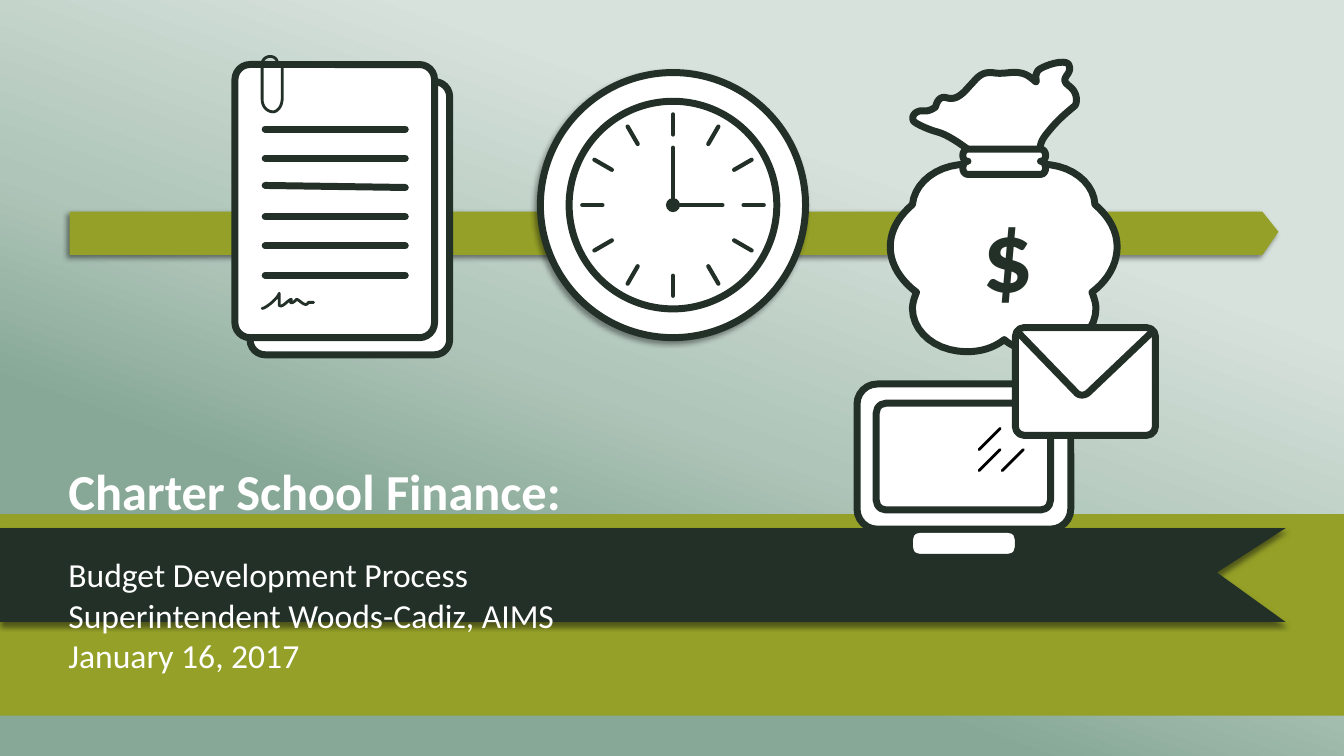
from dataclasses import dataclass
from math import cos, pi, sin

from lxml import etree
from pptx import Presentation
from pptx.dml.color import RGBColor
from pptx.enum import shapes as kinds, text as modes
from pptx.oxml import ns
from pptx.util import Inches, Pt


@dataclass(frozen=True)
class Theme:
    """Colours, font and sizes of the slide."""
    ink: str = "223028"
    olive: str = "94A027"
    white: str = "FFFFFF"
    black: str = "000000"
    shade: str = "0D0D0D"
    sky: tuple = ((27, "D7E2DC"), (53, "AFC5B9"), (70, "87A896"))
    font: str = "Calibri"
    title: int = 36
    body: int = 24
    sign: int = 72
    bold: int = 5
    mid: int = 3
    thin: int = 2


T = Theme()
OVAL = kinds.MSO_SHAPE.OVAL
RECT = kinds.MSO_SHAPE.RECTANGLE
ROUND = kinds.MSO_SHAPE.ROUNDED_RECTANGLE


def sub(node, tag, **attrs):
    """Append a drawing element and return it."""
    return etree.SubElement(node, ns.qn("a:" + tag), {k: str(v) for k, v in attrs.items()})


def cast(node, color, alpha, turn):
    """Put an outer shadow in an effect list."""
    out = sub(node, "outerShdw", blurRad=Pt(4), dist=Pt(3), dir=turn * 60000,
              algn="ctr", rotWithShape=0)
    sub(sub(out, "srgbClr", val=color), "alpha", val=alpha * 1000)


def stroke(part, width, color):
    """Draw a round-ended line."""
    part.line.color.rgb = RGBColor.from_string(color)
    part.line.width = Pt(width)
    edge = part._element.spPr.find(ns.qn("a:ln"))
    edge.set("cap", "rnd")
    sub(edge, "round")


def paint(shape, fill=T.white, width=T.bold, shadow=None):
    """Set the fill, outline and shadow of a shape."""
    shape.shadow.inherit = False
    if fill:
        shape.fill.solid()
        shape.fill.fore_color.rgb = RGBColor.from_string(fill)
    else:
        shape.fill.background()
    if width:
        stroke(shape, width, T.ink)
    else:
        shape.line.fill.background()
    if shadow:
        cast(shape._element.spPr.find(ns.qn("a:effectLst")), *shadow)


def block(slide, kind, x, y, w, h, radius=0, **look):
    """Add a preset shape."""
    shape = slide.shapes.add_shape(kind, Inches(x), Inches(y), Inches(w), Inches(h))
    if radius:
        shape.adjustments[0] = radius / min(w, h)
    paint(shape, **look)


def line(slide, x1, y1, x2, y2, width=T.bold, color=T.ink):
    """Add a straight line."""
    part = slide.shapes.add_connector(kinds.MSO_CONNECTOR.STRAIGHT, Inches(x1),
                                      Inches(y1), Inches(x2), Inches(y2))
    stroke(part, width, color)
    sub(part._element.spPr, "effectLst")


def curve(start, bend, steps=10):
    """Return points along a cubic curve."""
    ends = [start, bend[:2], bend[2:4], bend[4:]]
    points = []
    for i in range(1, steps + 1):
        t = i / steps
        mix = ((1 - t) ** 3, 3 * t * (1 - t) ** 2, 3 * t * t * (1 - t), t ** 3)
        points.append(tuple(sum(m * p[k] for m, p in zip(mix, ends)) for k in (0, 1)))
    return points


def outline(slide, x, y, parts, close=True, **look):
    """Add a freeform; pairs are corners and sixes are curves."""
    points = [parts[0]]
    for part in parts[1:]:
        points += [part] if len(part) == 2 else curve(points[-1], part)
    spots = [(Inches(x + px), Inches(y + py)) for px, py in points]
    pen = slide.shapes.build_freeform(*spots[0])
    pen.add_line_segments(spots[1:], close=close)
    paint(pen.convert_to_shape(), **look)


def label(slide, x, y, w, h, words, size, color=T.white, bold=False, wrap=False, glow=False):
    """Add a text box."""
    frame = slide.shapes.add_textbox(Inches(x), Inches(y), Inches(w), Inches(h)).text_frame
    frame.word_wrap = wrap
    frame.auto_size = modes.MSO_AUTO_SIZE.SHAPE_TO_FIT_TEXT
    frame.text = words
    for para in frame.paragraphs:
        for run in para.runs:
            run.font.size, run.font.bold = Pt(size), bold
            run.font.color.rgb = RGBColor.from_string(color)
            if glow:
                cast(sub(run.font._element, "effectLst"), T.black, 60, 135)
            run.font.name = T.font


def sky(slide):
    """Fill the background with a gradient."""
    fill = slide.background.fill
    fill.gradient()
    fill.gradient_angle = 250
    stops = slide._element.find(".//" + ns.qn("a:gsLst"))
    stops.clear()
    for pos, color in T.sky:
        sub(sub(stops, "gs", pos=pos * 1000), "srgbClr", val=color)


def banner(slide, x, y, w, h):
    """Draw the olive band and its dark ribbon."""
    block(slide, RECT, x, y, w, h, fill=T.olive, width=0)
    outline(slide, x, y + 0.14, [(0, 0), (12.75, 0), (12.07, 0.44), (12.75, 0.93), (0, 0.93)],
            fill=T.ink, width=0, shadow=(T.shade, 50, 90))


def track(slide, x, y, w, h, count=4, step=3.35):
    """Draw the row of arrow bars."""
    for i in range(count):
        outline(slide, x + i * step, y, [(0, 0), (w - 0.16, 0), (w, 0.2), (w - 0.16, h), (0, h)],
                fill=T.olive, width=0, shadow=(T.shade, 50, 135))


def paper(slide, x, y, w, h):
    """Draw two clipped sheets with a signature."""
    for dx, dy in ((0.15, 0.17), (0, 0)):
        block(slide, ROUND, x + dx, y + dy, w, h, radius=0.15)
    for i in range(6):
        row = y + 0.64 + i * 0.29
        line(slide, x + 0.3, row - (0.02 if i == 2 else 0), x + 1.69, row)
    sign = [(0, 0.15), (0.03, 0.15, 0.15, 0.06, 0.17, 0), (0.17, 0.03, 0.17, 0.09, 0.17, 0.12),
            (0.2, 0.15, 0.26, 0.06, 0.29, 0.06), (0.26, 0.12, 0.32, 0.09, 0.34, 0.06),
            (0.37, 0.06, 0.43, 0.15, 0.46, 0.09), (0.46, 0.09, 0.49, 0.09, 0.51, 0.09)]
    clip = [(0.15, 0.05), (0.14, 0.01, 0.1, 0, 0.08, 0), (0.05, 0, 0, 0.02, 0, 0.08), (0, 0.42),
            (0, 0.52, 0.07, 0.55, 0.11, 0.55), (0.14, 0.55, 0.2, 0.51, 0.2, 0.41), (0.2, 0.06)]
    for dy, path in ((2.27, sign), (-0.08, clip)):
        outline(slide, x + 0.27, y + dy, path, close=False, fill=None, width=T.thin)


def clock(slide, x, y, size):
    """Draw a clock at three."""
    mx, my = x + size / 2, y + size / 2
    block(slide, OVAL, x, y, size, size, shadow=(T.black, 40, 135))
    block(slide, OVAL, mx - 1.03, my - 1.03, 2.06, 2.06)
    for i in range(12):
        dx, dy = sin(i * pi / 6), cos(i * pi / 6)
        line(slide, mx + 0.7 * dx, my + 0.7 * dy, mx + 0.9 * dx, my + 0.9 * dy, T.mid)
    line(slide, mx, my - 0.57, mx, my - 0.06, T.mid)
    line(slide, mx + 0.03, my, mx + 0.49, my, T.mid)
    block(slide, OVAL, mx - 0.07, my - 0.07, 0.14, 0.14, fill=T.ink, width=0)


def purse(slide, x, y):
    """Draw the money bag."""
    sack = [(2.25, 1.86), (2.25, 1.7, 2.17, 1.56, 2.03, 1.44), (2.02, 1.22, 1.79, 1.04, 1.5, 1.04),
            (0.76, 1.04), (0.47, 1.04, 0.24, 1.22, 0.22, 1.44), (0.08, 1.56, 0, 1.7, 0, 1.86),
            (0, 2.03, 0.1, 2.19, 0.26, 2.31), (0.24, 2.36, 0.22, 2.42, 0.22, 2.47),
            (0.22, 2.71, 0.46, 2.9, 0.76, 2.9), (0.9, 2.9, 1.03, 2.86, 1.13, 2.78),
            (1.22, 2.86, 1.36, 2.9, 1.5, 2.9), (1.8, 2.9, 2.04, 2.71, 2.04, 2.47),
            (2.04, 2.42, 2.02, 2.36, 2, 2.31), (2.16, 2.19, 2.25, 2.03, 2.25, 1.86)]
    neck = [(0.78, 0.9), (0.78, 0.9, 0.59, 0.75, 0.47, 0.72), (0.36, 0.69, 0.24, 0.63, 0.23, 0.61),
            (0.2, 0.55, 0.27, 0.5, 0.33, 0.51), (0.39, 0.52, 0.45, 0.47, 0.45, 0.47),
            (0.45, 0.47, 0.47, 0.35, 0.56, 0.38), (0.65, 0.41, 0.72, 0.34, 0.78, 0.27),
            (0.85, 0.2, 0.89, 0.12, 1.01, 0.13), (1.12, 0.15, 1.19, 0.12, 1.27, 0.13),
            (1.35, 0.14, 1.38, 0.17, 1.43, 0.21), (1.48, 0.26, 1.4, 0.14, 1.49, 0.09),
            (1.58, 0.04, 1.74, 0, 1.77, 0.05), (1.82, 0.15, 1.66, 0.18, 1.77, 0.26),
            (1.87, 0.33, 1.85, 0.44, 1.83, 0.46), (1.67, 0.59, 1.62, 0.65, 1.54, 0.75),
            (1.47, 0.84, 1.49, 0.9, 1.49, 0.9)]
    tie = [(1.49, 1.01), (1.52, 1.01, 1.54, 0.99, 1.54, 0.95), (1.54, 0.92, 1.52, 0.89, 1.49, 0.89),
           (0.77, 0.89), (0.74, 0.89, 0.72, 0.92, 0.72, 0.95), (0.72, 0.99, 0.74, 1.01, 0.77, 1.01),
           (0.74, 1.01, 0.72, 1.04, 0.72, 1.08), (0.72, 1.11, 0.74, 1.14, 0.77, 1.14),
           (1.49, 1.14), (1.52, 1.14, 1.54, 1.11, 1.54, 1.08), (1.54, 1.04, 1.52, 1.01, 1.49, 1.01)]
    for path in (sack, neck, tie):
        outline(slide, x, y, path)
    label(slide, x + 0.82, y + 1.26, 0.71, 1.31, "$", T.sign, T.ink, bold=True)


def desk(slide, x, y):
    """Draw the monitor and its envelope."""
    for dx, dy, w, h, arc in ((0.52, 1.44, 1.08, 0.28, 0.1), (0, 0, 2.12, 1.44, 0.2),
                              (0.19, 0.19, 1.73, 1.06, 0.1), (1.57, -0.56, 1.39, 1.07, 0.09)):
        block(slide, ROUND, x + dx, y + dy, w, h, radius=arc)
    outline(slide, x + 1.59, y - 0.52, [(1.34, 0), (0.71, 0.6), (0.67, 0.64, 0.61, 0.64, 0.58, 0.6),
                                        (0, 0)], close=False)
    for dx, dy in ((1.21, 0.86), (1.21, 0.65), (1.44, 0.86)):
        line(slide, x + dx, y + dy, x + dx + 0.21, y + dy - 0.21, T.thin, T.black)


def main():
    """Build and save the slide."""
    deck = Presentation()
    deck.slide_width, deck.slide_height = Inches(13.33), Inches(7.5)
    slide = deck.slides.add_slide(deck.slide_layouts[6])
    sky(slide)
    banner(slide, 0, 5.1, 13.33, 2)
    track(slide, 0.69, 2.1, 1.94, 0.43)
    label(slide, 0.58, 4.52, 5.14, 0.71, "Charter School Finance:", T.title, bold=True, glow=True)
    label(slide, 0.58, 5.45, 6.09, 1.31, "Budget Development Process\n"
          "Superintendent Woods-Cadiz, AIMS\nJanuary 16, 2017", T.body, wrap=True)
    paper(slide, 2.33, 0.64, 1.98, 2.71)
    clock(slide, 5.36, 0.72, 2.63)
    purse(slide, 8.83, 0.59)
    desk(slide, 8.5, 3.81)
    deck.save("out.pptx")


if __name__ == "__main__":
    main()
